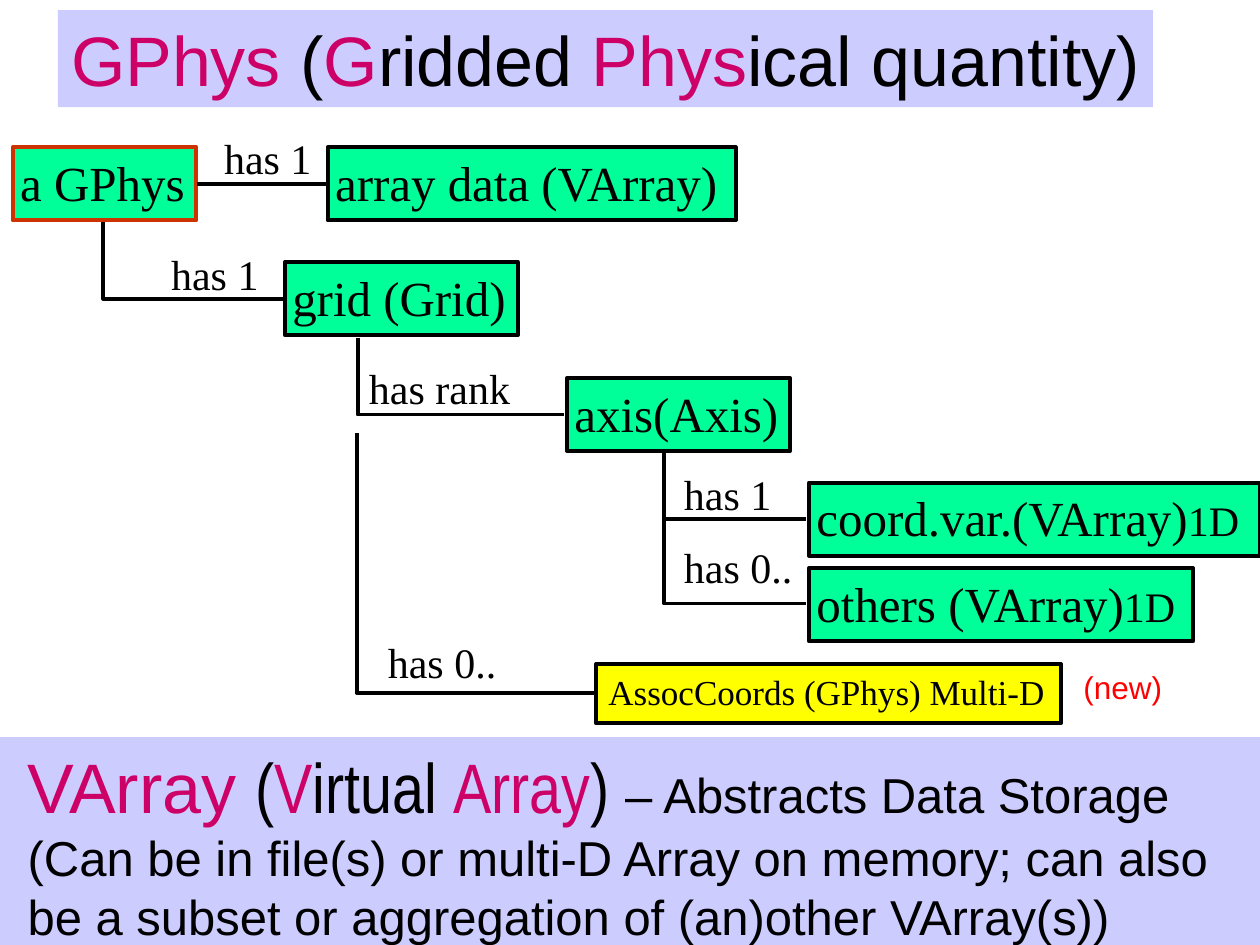
from dataclasses import dataclass

from pptx import Presentation
from pptx.dml.color import RGBColor
from pptx.enum.shapes import MSO_CONNECTOR as Conn, MSO_SHAPE as Shape
from pptx.enum.text import MSO_ANCHOR as Anchor, MSO_AUTO_SIZE as AutoSize, PP_ALIGN as Align
from pptx.oxml.ns import qn
from pptx.util import Inches, Pt


@dataclass(frozen=True)
class Theme:
    band: str = "CCCCFF"
    node: str = "00FF99"
    new_node: str = "FFFF00"
    accent: str = "CC0066"
    root_line: str = "CC3300"
    black: str = "000000"
    red: str = "FF0000"
    serif: str = "Times New Roman"
    sans: str = "Arial"
    narrow: str = "Arial Narrow"
    title: int = 40
    body: int = 28
    label: int = 24
    small: int = 20
    note: int = 18
    line: float = 2.25


T = Theme()
NODE_INSETS = (0.06, 0.04, 0.06, 0.04)
TEXT_INSETS = (0.1, 0.05, 0.1, 0.05)


def set_font(font, name=None, size=None, color=None):
    if name:
        font.name = name
    if size:
        font.size = Pt(size)
    if color:
        font.color.rgb = RGBColor.from_string(color)


def write(sp, runs, name, size=None, color=None, insets=TEXT_INSETS,
          wrap=False, anchor=Anchor.TOP, align=Align.LEFT):
    tf = sp.text_frame
    tf.word_wrap = wrap
    tf.auto_size = AutoSize.SHAPE_TO_FIT_TEXT
    tf.vertical_anchor = anchor
    tf.margin_left, tf.margin_top, tf.margin_right, tf.margin_bottom = map(Inches, insets)
    p = tf.paragraphs[0]
    p.alignment = align
    set_font(p.font, name, size, color)
    for text, style in runs:
        for i, line in enumerate(text.split("\n")):
            if i:
                p.add_line_break()
            r = p.add_run()
            r.text = line
            set_font(r.font, **style)


def add_rect(s, at, fill, line=None):
    sp = s.shapes.add_shape(Shape.RECTANGLE, *map(Inches, at))
    sp.shadow.inherit = False
    sp.fill.solid()
    sp.fill.fore_color.rgb = RGBColor.from_string(fill)
    if line:
        sp.line.color.rgb = RGBColor.from_string(line)
        sp.line.width = Pt(T.line)
    else:
        sp.line.fill.background()
    return sp


def add_node(s, x, y, w, text, suffix="", line=T.black):
    sp = add_rect(s, (x, y, w, 0.58), T.node, line)
    runs = [(text, {"size": T.body})]
    if suffix:
        runs.append((suffix, {"size": T.label}))
    write(sp, runs, T.serif, color=T.black, insets=NODE_INSETS)
    return sp


def add_label(s, at, text, name=T.serif, size=T.label, color=T.black):
    write(s.shapes.add_textbox(*map(Inches, at)), [(text, {})], name, size, color)


def add_line(s, kind, x1, y1, x2, y2):
    c = s.shapes.add_connector(kind, *map(Inches, (x1, y1, x2, y2)))
    c.line.color.rgb = RGBColor.from_string(T.black)
    c.line.width = Pt(T.line)
    sp_pr = c._element.spPr
    sp_pr.append(sp_pr.makeelement(qn("a:effectLst"), {}))
    return c


def add_branch(s, x1, y1, x2, y2):
    cx, cy = (x1 + x2) / 2, (y1 + y2) / 2
    half_w, half_h = (y2 - y1) / 2, (x2 - x1) / 2
    c = add_line(s, Conn.ELBOW, cx + half_w, cy - half_h, cx - half_w, cy + half_h)
    sp_pr = c._element.spPr
    sp_pr.find(qn("a:xfrm")).set("rot", "16200000")
    sp_pr.find(qn("a:prstGeom")).set("prst", "bentConnector2")


def add_title(s):
    accent, plain = {"color": T.accent}, {"color": T.black}
    runs = [("GPhys", accent), (" (", plain), ("G", accent), ("ridded ", plain),
            ("Phys", accent), ("ical quantity)", plain)]
    write(add_rect(s, (0.46, 0.08, 8.69, 0.77), T.band), runs, T.sans, T.title,
          anchor=Anchor.MIDDLE, align=Align.CENTER)


def add_summary(s):
    accent = {"name": T.narrow, "size": T.title, "color": T.accent}
    plain = {**accent, "color": T.black}
    runs = [("VArray ", {**accent, "name": T.sans}), ("(", plain), ("V", accent),
            ("irtual ", plain), ("Array", accent), (") ", plain),
            ("– Abstracts Data Storage\n"
             "(Can be in file(s) or multi-D Array on memory; can also \n"
             "be a subset or aggregation of (an)other VArray(s))",
             {"name": T.sans, "size": T.body, "color": T.black})]
    write(add_rect(s, (0, 5.85, 10, 1.7), T.band), runs, T.sans,
          insets=(0.22, 0.05, 0.1, 0.05), wrap=True, anchor=Anchor.MIDDLE)


def add_tree(s):
    root = add_node(s, 0.1, 1.17, 1.46, "a GPhys", line=T.root_line)
    data = add_node(s, 2.6, 1.17, 3.24, "array data (VArray)")
    link = add_line(s, Conn.STRAIGHT, 1.56, 1.46, 2.6, 1.46)
    link.begin_connect(root, 3)
    link.end_connect(data, 1)

    add_node(s, 2.26, 2.08, 1.85, "grid (Grid)")
    add_node(s, 4.5, 3, 1.77, "axis(Axis)")
    add_node(s, 6.42, 3.83, 3.58, "coord.var.(VArray)", "1D")
    add_node(s, 6.42, 4.51, 3.05, "others (VArray)", "1D")
    write(add_rect(s, (4.73, 5.27, 3.69, 0.47), T.new_node, T.black),
          [("AssocCoords (GPhys) Multi-D", {})], T.serif, T.small, T.black)

    for ends in ((0.82, 1.76, 2.25, 2.37), (2.84, 2.68, 4.48, 3.29),
                 (5.27, 3.59, 6.4, 4.12), (5.27, 3.59, 6.4, 4.79),
                 (2.83, 3.44, 4.72, 5.5)):
        add_branch(s, *ends)

    for x, y, w, text in ((1.68, 1, 0.9, "has 1"), (1.26, 1.92, 0.9, "has 1"),
                          (2.83, 2.83, 1.32, "has rank"), (5.33, 3.67, 0.9, "has 1"),
                          (5.33, 4.25, 1.06, "has 0.."), (2.98, 5, 1.06, "has 0..")):
        add_label(s, (x, y, w, 0.5), text)
    add_label(s, (8.5, 5.25, 0.83, 0.4), "(new)", T.sans, T.note, T.red)


def main():
    prs = Presentation()
    prs.slide_width, prs.slide_height = Inches(10), Inches(7.5)
    s = prs.slides.add_slide(prs.slide_layouts[6])
    add_title(s)
    add_tree(s)
    add_summary(s)
    prs.save("out.pptx")


if __name__ == "__main__":
    main()
